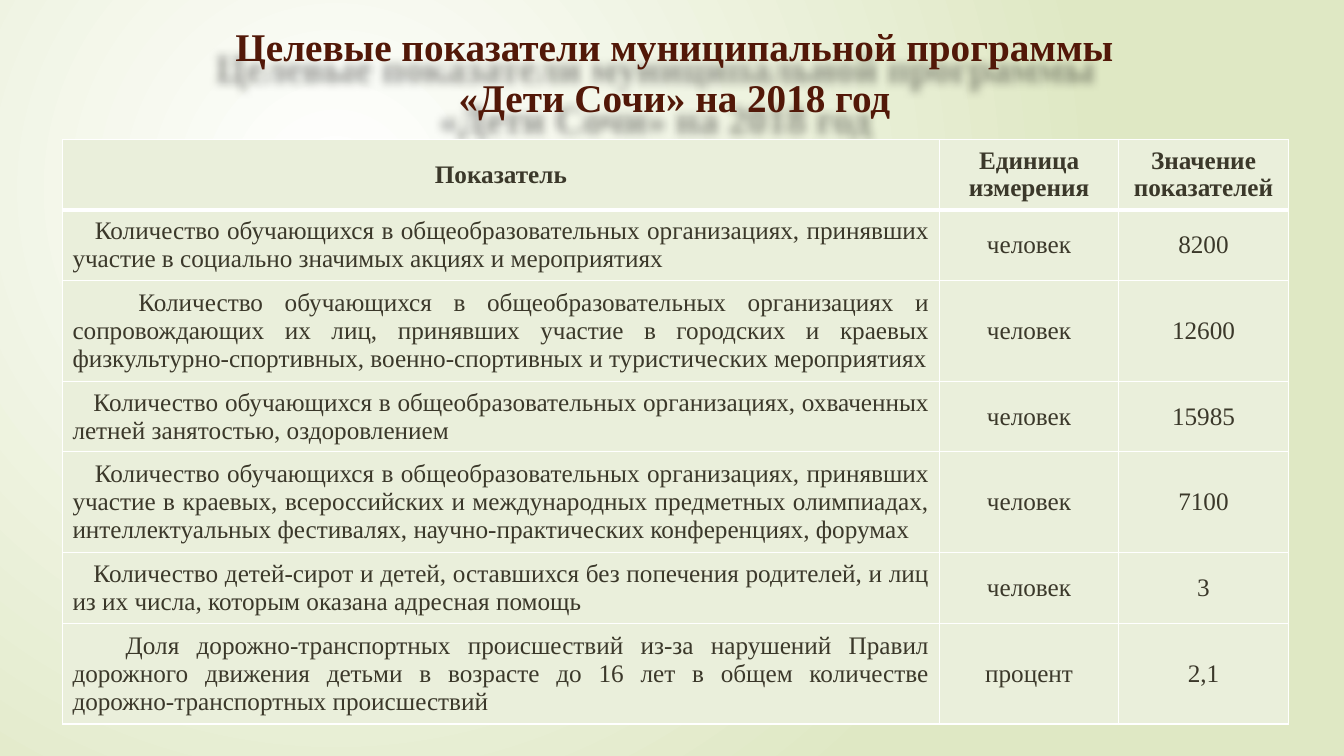
from dataclasses import dataclass

from pptx import Presentation
from pptx.dml.color import RGBColor
from pptx.enum.text import MSO_ANCHOR, PP_ALIGN
from pptx.oxml import parse_xml
from pptx.oxml.ns import nsdecls
from pptx.util import Pt

CENTER = PP_ALIGN.CENTER
JUSTIFY = PP_ALIGN.JUSTIFY
MIDDLE = MSO_ANCHOR.MIDDLE


@dataclass(frozen=True)
class Theme:
    font: str = "Times New Roman"
    title_size: int = 28
    table_size: int = 18
    title: str = "521808"
    text: str = "3B382A"
    cell: str = "EAEFDB"
    border: str = "FFFFFF"
    glow: str = "FFFFFF"
    edge: str = "DFE8C4"
    shadow: str = "000000"


THEME = Theme()
TITLE = "Целевые показатели муниципальной программы «Дети Сочи» на 2018 год"
HEADINGS = ("Показатель", "Единица измерения", "Значение показателей")
INDICATORS = (
    ("Количество обучающихся в общеобразовательных организациях, принявших участие "
     "в социально значимых акциях и мероприятиях", "человек", "8200", 16),
    ("Количество обучающихся в общеобразовательных организациях и сопровождающих их лиц, "
     "принявших участие в городских и краевых физкультурно-спортивных, "
     "военно-спортивных и туристических мероприятиях", "человек", "12600", 47),
    ("Количество обучающихся в общеобразовательных организациях, охваченных "
     "летней занятостью, оздоровлением", "человек", "15985", 15),
    ("Количество обучающихся в общеобразовательных организациях, принявших участие "
     "в краевых, всероссийских и международных предметных олимпиадах, "
     "интеллектуальных фестивалях, научно-практических конференциях, форумах",
     "человек", "7100", 16),
    ("Количество детей-сирот и детей, оставшихся без попечения родителей, и лиц "
     "из их числа, которым оказана адресная помощь", "человек", "3", 15),
    ("Доля дорожно-транспортных происшествий из-за нарушений Правил дорожного движения "
     "детьми в возрасте до 16 лет в общем количестве дорожно-транспортных происшествий",
     "процент", "2,1", 38),
)
COLUMN_WIDTHS = (626.4, 128.2, 121)
ROW_HEIGHTS = (50.4, 50.4, 72, 50.4, 72, 50.4, 72)


def paint_background(page):
    page._element.cSld.insert(0, parse_xml(
        f'<p:bg {nsdecls("p", "a")}><p:bgPr><a:gradFill rotWithShape="1"><a:gsLst>'
        f'<a:gs pos="0"><a:srgbClr val="{THEME.glow}"/></a:gs>'
        f'<a:gs pos="100000"><a:srgbClr val="{THEME.edge}"/></a:gs></a:gsLst>'
        '<a:path path="circle"><a:fillToRect l="50000" t="50000" r="100000" b="100000"/>'
        '</a:path></a:gradFill><a:effectLst/></p:bgPr></p:bg>'))


def style_paragraph(para, size, color, bold, align):
    para.alignment = align
    para.font.name = THEME.font
    para.font.size = Pt(size)
    para.font.bold = bold
    para.font.color.rgb = RGBColor.from_string(color)


def add_title(page):
    box = page.shapes.add_textbox(Pt(139), Pt(10), Pt(685.4), Pt(75))
    box.text_frame.word_wrap = True
    para = box.text_frame.paragraphs[0]
    para.text = TITLE
    para.line_spacing = 1.08
    style_paragraph(para, THEME.title_size, THEME.title, True, CENTER)
    box._element.spPr.append(parse_xml(
        f'<a:effectLst {nsdecls("a")}>'
        f'<a:outerShdw blurRad="{Pt(6)}" dist="{Pt(20)}" dir="8100000" algn="tr" rotWithShape="0">'
        f'<a:srgbClr val="{THEME.shadow}"><a:alpha val="40000"/></a:srgbClr>'
        '</a:outerShdw></a:effectLst>'))


def border_cell(cell, top, bottom):
    properties = cell._tc.get_or_add_tcPr()
    sides = (("lnL", 1), ("lnR", 1), ("lnT", top), ("lnB", bottom))
    for place, (side, width) in enumerate(sides):
        properties.insert(place, parse_xml(
            f'<a:{side} {nsdecls("a")} w="{Pt(width)}"><a:solidFill>'
            f'<a:srgbClr val="{THEME.border}"/></a:solidFill></a:{side}>'))


def fill_cell(cell, text, row, align, indent=0):
    cell.fill.solid()
    cell.fill.fore_color.rgb = RGBColor.from_string(THEME.cell)
    cell.vertical_anchor = MIDDLE
    border_cell(cell, 3 if row == 1 else 1, 3 if row == 0 else 1)
    para = cell.text_frame.paragraphs[0]
    para.text = text
    style_paragraph(para, THEME.table_size, THEME.text, row == 0, align)
    if indent:
        properties = para._p.get_or_add_pPr()
        properties.set("marL", "0")
        properties.set("indent", str(Pt(indent)))


def add_indicator_table(page):
    table = page.shapes.add_table(
        len(ROW_HEIGHTS), len(COLUMN_WIDTHS), Pt(44.6), Pt(99.4),
        Pt(sum(COLUMN_WIDTHS)), Pt(sum(ROW_HEIGHTS))).table
    for column, width in zip(table.columns, COLUMN_WIDTHS):
        column.width = Pt(width)
    for table_row, height in zip(table.rows, ROW_HEIGHTS):
        table_row.height = Pt(height)
    for column, heading in enumerate(HEADINGS):
        fill_cell(table.cell(0, column), heading, 0, CENTER)
    for row, (indicator, unit, value, indent) in enumerate(INDICATORS, start=1):
        fill_cell(table.cell(row, 0), indicator, row, JUSTIFY, indent)
        fill_cell(table.cell(row, 1), unit, row, CENTER)
        fill_cell(table.cell(row, 2), value, row, CENTER)


def main():
    deck = Presentation()
    deck.slide_width, deck.slide_height = Pt(960), Pt(540)
    page = deck.slides.add_slide(deck.slide_layouts[6])
    paint_background(page)
    add_title(page)
    add_indicator_table(page)
    deck.save("out.pptx")


if __name__ == "__main__":
    main()
